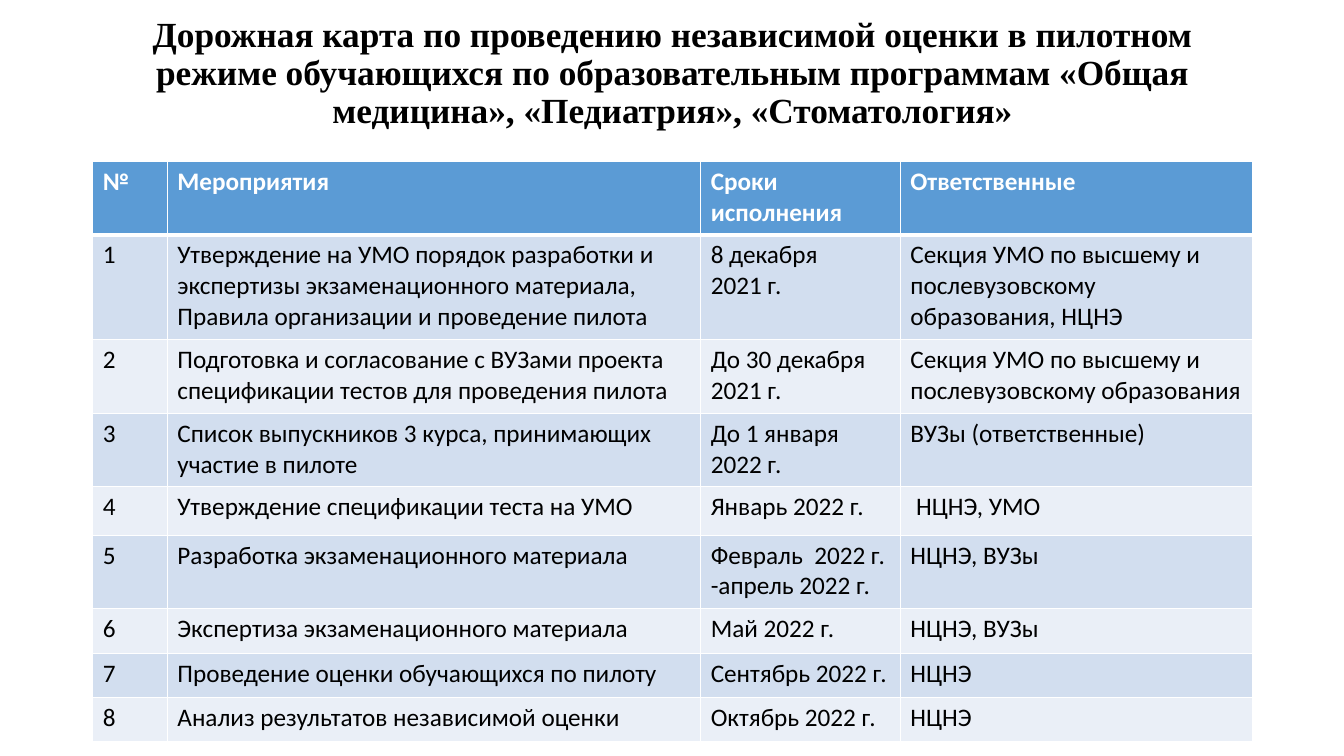
from lxml.etree import SubElement
from pptx import Presentation
from pptx.dml.color import RGBColor
from pptx.enum.text import MSO_ANCHOR, MSO_AUTO_SIZE, PP_ALIGN
from pptx.oxml.ns import qn
from pptx.util import Inches, Pt

BLACK = RGBColor(0x00, 0x00, 0x00)
WHITE = RGBColor(0xFF, 0xFF, 0xFF)
HEADER_BLUE = RGBColor(0x5B, 0x9B, 0xD5)
ODD_ROW = RGBColor(0xD2, 0xDE, 0xEF)
EVEN_ROW = RGBColor(0xEA, 0xEF, 0xF7)

TITLE = ("Дорожная карта по проведению независимой оценки в пилотном режиме "
         "обучающихся по образовательным программам «Общая медицина», "
         "«Педиатрия», «Стоматология»")
HEADINGS = ("№", "Мероприятия", "Сроки исполнения", "Ответственные")
STAGES = [
    ("Утверждение на УМО порядок разработки и экспертизы экзаменационного "
     "материала, Правила организации и проведение пилота",
     "8 декабря\n2021 г.",
     "Секция УМО по высшему и послевузовскому образования, НЦНЭ"),
    ("Подготовка и согласование с ВУЗами проекта спецификации тестов "
     "для проведения пилота",
     "До 30 декабря\n2021 г.",
     "Секция УМО по высшему и послевузовскому образования"),
    ("Список выпускников 3 курса, принимающих участие в пилоте",
     "До 1 января\n2022 г.", "ВУЗы (ответственные)"),
    ("Утверждение спецификации теста на УМО", "Январь 2022 г.", " НЦНЭ, УМО"),
    ("Разработка экзаменационного материала",
     "Февраль  2022 г. -апрель 2022 г.", "НЦНЭ, ВУЗы"),
    ("Экспертиза экзаменационного материала", "Май 2022 г.", "НЦНЭ, ВУЗы"),
    ("Проведение оценки обучающихся по пилоту", "Сентябрь 2022 г.", "НЦНЭ"),
    ("Анализ результатов независимой оценки", "Октябрь 2022 г.", "НЦНЭ"),
]
COLUMN_WIDTHS = (0.74, 5.29, 1.98, 3.49)
ROW_HEIGHTS = (0.73, 1.04, 0.73, 0.73, 0.48, 0.73, 0.44, 0.44, 0.44)


def style_font(paragraph, name, size, color, bold):
    font = paragraph.font
    font.name, font.size, font.bold = name, Pt(size), bold
    font.color.rgb = color


def format_title(title):
    title.left, title.top = Inches(0.92), Inches(-0.12)
    title.width, title.height = Inches(11.5), Inches(1.71)
    frame = title.text_frame
    frame.text = TITLE
    frame.word_wrap = True
    frame.auto_size = MSO_AUTO_SIZE.NONE
    frame.vertical_anchor = MSO_ANCHOR.MIDDLE
    heading = frame.paragraphs[0]
    heading.alignment = PP_ALIGN.CENTER
    heading.line_spacing = 0.9
    style_font(heading, "Times New Roman", 25.2, BLACK, True)


def add_borders(cell, top, bottom):
    """Draw white cell borders; top and bottom are widths in points."""
    properties = cell._tc.get_or_add_tcPr()
    for side, width in (("L", 1), ("R", 1), ("T", top), ("B", bottom)):
        line = SubElement(properties, qn(f"a:ln{side}"), w=str(Pt(width)))
        fill = SubElement(line, qn("a:solidFill"))
        SubElement(fill, qn("a:srgbClr"), val=str(WHITE))


def fill_cell(cell, text, row):
    is_header = row == 0
    add_borders(cell, top=3 if row == 1 else 1, bottom=3 if is_header else 1)
    cell.fill.solid()
    if is_header:
        cell.fill.fore_color.rgb = HEADER_BLUE
    else:
        cell.fill.fore_color.rgb = ODD_ROW if row % 2 else EVEN_ROW
    cell.text = text
    for paragraph in cell.text_frame.paragraphs:
        style_font(paragraph, "Calibri", 18, WHITE if is_header else BLACK, is_header)


def add_roadmap(slide):
    rows = [HEADINGS] + [(str(number), *stage)
                         for number, stage in enumerate(STAGES, start=1)]
    roadmap = slide.shapes.add_table(
        len(rows), len(HEADINGS), Inches(0.92), Inches(1.6),
        Inches(sum(COLUMN_WIDTHS)), Inches(sum(ROW_HEIGHTS))).table
    for column, width in zip(roadmap.columns, COLUMN_WIDTHS):
        column.width = Inches(width)
    for row, (height, texts) in enumerate(zip(ROW_HEIGHTS, rows)):
        roadmap.rows[row].height = Inches(height)
        for column, text in enumerate(texts):
            fill_cell(roadmap.cell(row, column), text, row)


def main():
    presentation = Presentation()
    presentation.slide_width = Inches(13.33)
    presentation.slide_height = Inches(7.5)
    slide = presentation.slides.add_slide(presentation.slide_layouts[5])
    format_title(slide.shapes.title)
    add_roadmap(slide)
    presentation.save("out.pptx")


if __name__ == "__main__":
    main()
